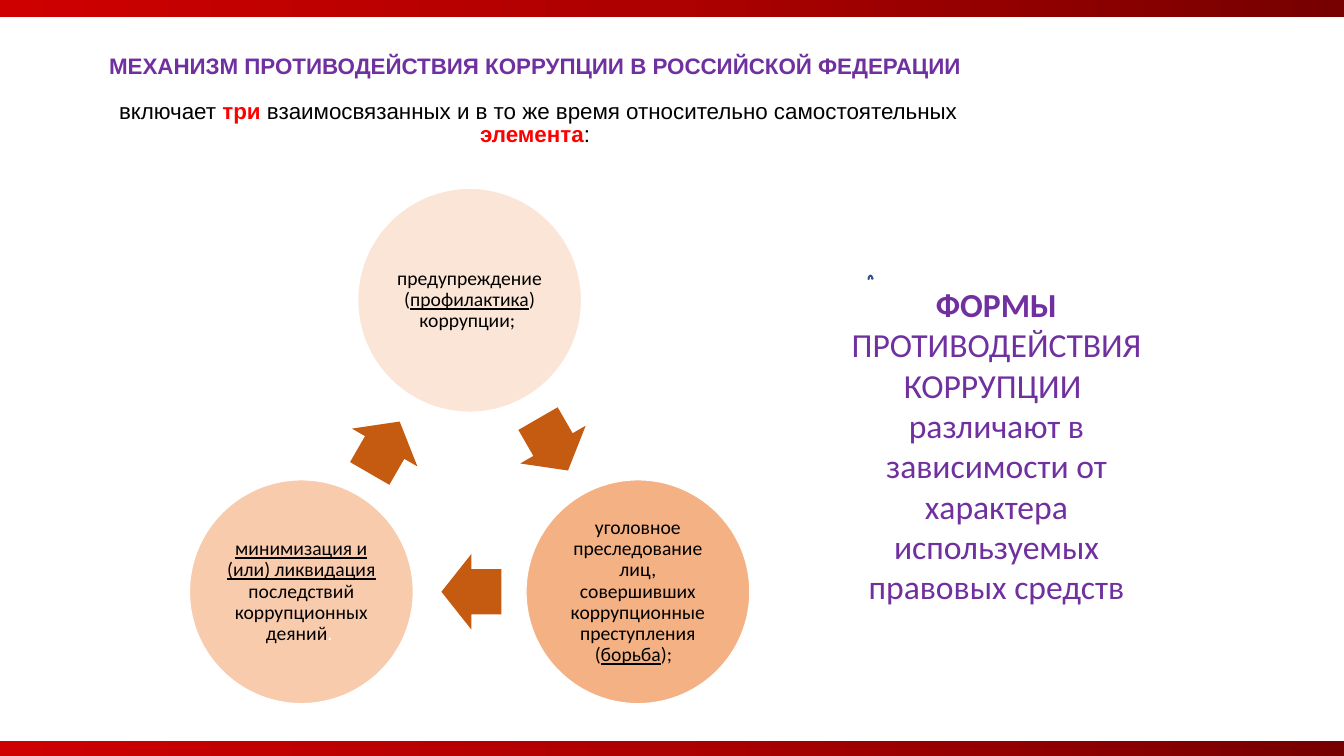
"""Build a slide on the mechanism of countering corruption."""
from copy import deepcopy
from math import cos, radians, sin

from pptx import Presentation
from pptx.dml.color import RGBColor
from pptx.enum.shapes import MSO_SHAPE
from pptx.enum.text import MSO_ANCHOR, MSO_AUTO_SIZE, PP_ALIGN
from pptx.util import Pt

RECT, OVAL = MSO_SHAPE.RECTANGLE, MSO_SHAPE.OVAL
ARROW, CURL = MSO_SHAPE.RIGHT_ARROW, MSO_SHAPE.CIRCULAR_ARROW
TOP, MIDDLE = MSO_ANCHOR.TOP, MSO_ANCHOR.MIDDLE
GROW, CENTER = MSO_AUTO_SIZE.SHAPE_TO_FIT_TEXT, PP_ALIGN.CENTER

BLACK, WHITE, RED, PURPLE = "000000", "FFFFFF", "FF0000", "7030A0"

HEAD = [
    [("МЕХАНИЗМ ПРОТИВОДЕЙСТВИЯ КОРРУПЦИИ В РОССИЙСКОЙ ФЕДЕРАЦИИ ", PURPLE, "b")],
    [("включает ", BLACK, ""), ("три", RED, "b"),
     (" взаимосвязанных и в то же время относительно самостоятельных ", BLACK, ""),
     ("элемента", RED, "b"), (": ", BLACK, "")],
]
FORMS = [
    [("ФОРМЫ ", PURPLE, "b"), ("ПРОТИВОДЕЙСТВИЯ КОРРУПЦИИ ", PURPLE, "")],
    [("различают в зависимости от характера используемых правовых средств", PURPLE, "")],
]
PARTS = [
    ("FBE5D6", [("предупреждение (", BLACK, ""), ("профилактика", BLACK, "u"),
                (") коррупции; ", BLACK, "")]),
    ("F4B183", [("уголовное преследование лиц, совершивших коррупционные преступления (",
                 BLACK, ""), ("борьба", BLACK, "u"), (");  ", BLACK, "")]),
    ("F8CBAD", [("минимизация и (или) ликвидация", BLACK, "u"),
                (" последствий коррупционных деяний", BLACK, ""), (". ", WHITE, "")]),
]
BAR_TOPS = (-2.9, 529.2)
BAR_STOPS = [(0, "CE0000"), (0.5, "AD0000"), (1, "770000")]

MID_X, MID_Y, RADIUS = 335.5, 353.3, 138.8
DISC, ARROW_W, ARROW_H, BACK = 160, 42.8, 54, 1.2


def rgb(code):
    return RGBColor.from_string(code)


def place(shape, left, top, width, height):
    shape.left, shape.top = Pt(left), Pt(top)
    shape.width, shape.height = Pt(width), Pt(height)


def write(frame, paras, font, size, line=1.0, gap=0):
    frame.word_wrap = True
    for i, runs in enumerate(paras):
        para = frame.paragraphs[0] if i == 0 else frame.add_paragraph()
        para.alignment, para.line_spacing = CENTER, line
        para.space_before = Pt(gap if i else 0)
        for text, color, style in runs:
            run = para.add_run()
            run.text = text
            run.font.name, run.font.size = font, Pt(size)
            run.font.color.rgb = rgb(color)
            run.font.bold = "b" in style
            run.font.underline = "u" in style


def draw(slide, kind, box, fill=None, line=None):
    shape = slide.shapes.add_shape(kind, *map(Pt, box))
    shape.shadow.inherit = False
    if fill:
        shape.fill.solid()
        shape.fill.fore_color.rgb = rgb(fill)
    if line:
        shape.line.color.rgb = rgb(line)
        shape.line.width = Pt(1)
    else:
        shape.line.fill.background()
    return shape


def draw_bar(slide, top):
    fill = draw(slide, RECT, (0, top, 960, 15.1)).fill
    fill.gradient()
    fill.gradient_angle = 0
    first = fill.gradient_stops[0]._gs
    first.addnext(deepcopy(first))
    for stop, (pos, color) in zip(fill.gradient_stops, BAR_STOPS):
        stop.position = pos
        stop.color.rgb = rgb(color)


def draw_cycle(slide):
    for i, (fill, runs) in enumerate(PARTS):
        turn = radians(120 * i)
        x, y = MID_X + RADIUS * sin(turn), MID_Y - RADIUS * cos(turn)
        disc = draw(slide, OVAL, (x - DISC / 2, y - DISC / 2, DISC, DISC), fill, WHITE)
        frame = disc.text_frame
        frame.margin_left = frame.margin_right = Pt(1.4)
        frame.margin_top = frame.margin_bottom = Pt(1.4)
        frame.vertical_anchor = MIDDLE
        write(frame, [runs], "Calibri", 14, 0.9)

        angle = 60 + 120 * i
        turn = radians(angle)
        x = MID_X + RADIUS / 2 * sin(turn) - BACK * cos(turn)
        y = MID_Y - RADIUS / 2 * cos(turn) - BACK * sin(turn)
        box = (x - ARROW_W / 2, y - ARROW_H / 2, ARROW_W, ARROW_H)
        arrow = draw(slide, ARROW, box, "C55A11")
        arrow.adjustments[0], arrow.adjustments[1] = 0.6, 0.5
        arrow.rotation = angle


def main():
    deck = Presentation()
    deck.slide_width, deck.slide_height = Pt(960), Pt(540)
    slide = deck.slides.add_slide(deck.slide_layouts[5])
    for top in BAR_TOPS:
        draw_bar(slide, top)
    draw(slide, CURL, (620, 196.5, 3.6, 5.8), "4472C4", "325491")

    title = slide.shapes.title
    place(title, 51.1, 36.7, 666.7, 93.6)
    title.text_frame.vertical_anchor = TOP
    title.text_frame.auto_size = GROW
    write(title.text_frame, HEAD, "Arial", 16, 0.85, 15.6)

    draw_cycle(slide)

    forms = slide.shapes.add_textbox(Pt(592.6), Pt(199.4), Pt(238.3), Pt(239.8))
    forms.text_frame.auto_size = GROW
    write(forms.text_frame, FORMS, "Calibri", 24)
    deck.save("out.pptx")


if __name__ == "__main__":
    main()
